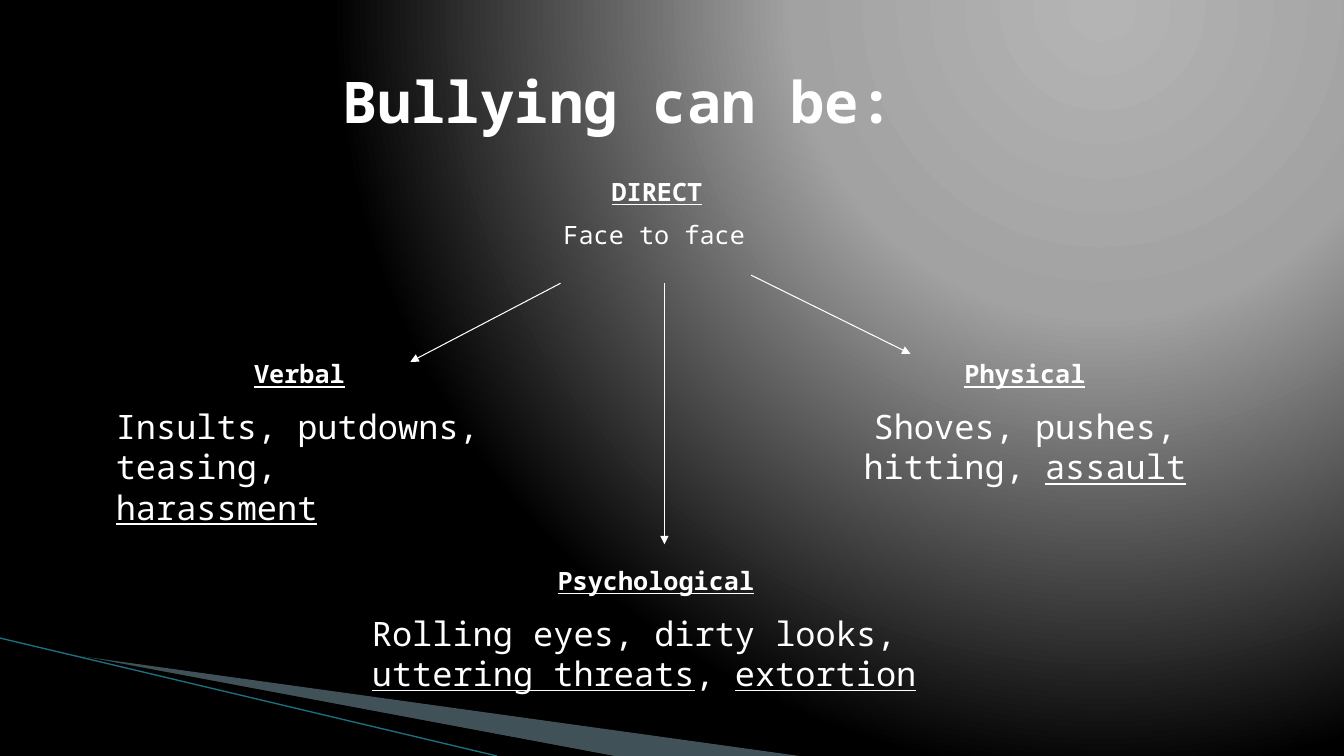
from dataclasses import dataclass

from lxml import etree
from pptx import Presentation
from pptx.dml.color import RGBColor
from pptx.enum.shapes import MSO_CONNECTOR
from pptx.enum.text import MSO_ANCHOR, PP_ALIGN
from pptx.oxml import parse_xml
from pptx.oxml.ns import nsdecls, qn
from pptx.util import Inches, Pt

STRAIGHT = MSO_CONNECTOR.STRAIGHT
MIDDLE = MSO_ANCHOR.MIDDLE
LEFT, CENTER = PP_ALIGN.LEFT, PP_ALIGN.CENTER


@dataclass(frozen=True)
class Theme:
    font: str = "Noto Sans Mono"
    text: str = "FFFFFF"
    wedge: str = "A0CBDC"
    wedge_alpha: int = 40
    shade: str = "000000"
    stripe: str = "1C7080"
    glow: tuple = ((0, "B4B4B4"), (40, "A2A2A2"), (100, "000000"))
    title_size: int = 41
    heading_size: int = 18
    body_size: int = 24


THEME = Theme()


def set_background(slide):
    """Fill the background with a round glow centred near the top right."""
    stops = "".join(
        f'<a:gs pos="{position * 1000}"><a:srgbClr val="{color}"/></a:gs>'
        for position, color in THEME.glow
    )
    background = parse_xml(
        f'<p:bg {nsdecls("p", "a")}><p:bgPr><a:gradFill rotWithShape="1">'
        f'<a:gsLst>{stops}</a:gsLst><a:path path="circle">'
        '<a:fillToRect l="65000" t="0" r="0" b="98000"/></a:path>'
        "</a:gradFill><a:effectLst/></p:bgPr></p:bg>"
    )
    slide.element.find(qn("p:cSld")).insert(0, background)


def add_line(slide, start, end, color, width, arrow=False):
    points = [Inches(value) for value in (*start, *end)]
    line = slide.shapes.add_connector(STRAIGHT, *points)
    line.line.color.rgb = RGBColor.from_string(color)
    line.line.width = Pt(width)
    properties = line.element.spPr
    if arrow:
        outline = properties.find(qn("a:ln"))
        etree.SubElement(outline, qn("a:tailEnd"), type="triangle")
    etree.SubElement(properties, qn("a:effectLst"))


def add_wedge(slide, points, color, alpha=100):
    corners = [(Inches(x), Inches(y)) for x, y in points]
    builder = slide.shapes.build_freeform(*corners[0])
    builder.add_line_segments(corners[1:], close=True)
    wedge = builder.convert_to_shape()
    wedge.shadow.inherit = False
    wedge.fill.solid()
    wedge.fill.fore_color.rgb = RGBColor.from_string(color)
    wedge.line.fill.background()
    if alpha < 100:
        fill_color = wedge.element.spPr.find(qn("a:solidFill"))[0]
        etree.SubElement(fill_color, qn("a:alpha"), val=str(alpha * 1000))


def add_corner_decoration(slide):
    add_wedge(slide, [(0.73, 6.5), (7.93, 7.5), (6.08, 7.5)],
              THEME.wedge, THEME.wedge_alpha)
    add_wedge(slide, [(0.71, 6.49), (6.09, 7.5), (4.96, 7.5)], THEME.shade)
    add_line(slide, (0, 6.33), (4.93, 7.5), THEME.stripe, 0.95)


def add_text_frame(slide, box):
    shape = slide.shapes.add_textbox(*[Inches(value) for value in box])
    shape.text_frame.word_wrap = True
    return shape.text_frame


def add_run(paragraph, text, size, bold=False, underline=False):
    run = paragraph.add_run()
    run.text = text
    font = run.font
    font.name = THEME.font
    font.size = Pt(size)
    font.bold = bold
    font.underline = underline
    font.color.rgb = RGBColor.from_string(THEME.text)


def add_title(slide, box, text):
    frame = add_text_frame(slide, box)
    frame.vertical_anchor = MIDDLE
    add_run(frame.paragraphs[0], text, THEME.title_size, bold=True)


def add_topic(slide, box, heading, body, size, alignment=LEFT):
    """Place a heading over a body of (text, underlined) pieces."""
    frame = add_text_frame(slide, box)
    first = frame.paragraphs[0]
    first.alignment = CENTER
    add_run(first, heading, THEME.heading_size, bold=True, underline=True)
    second = frame.add_paragraph()
    second.alignment = alignment
    second.space_before = Pt(size / 2)
    for text, underlined in body:
        add_run(second, text, size, underline=underlined)


def add_bullying_diagram(slide):
    add_topic(slide, (5.49, 1.7, 2.05, 0.86), "DIRECT",
              [("Face to face", False)], THEME.heading_size)
    add_topic(slide, (1.05, 3.51, 3.84, 1.41), "Verbal",
              [("Insults, putdowns, teasing, ", False), ("harassment", True)],
              THEME.body_size)
    add_topic(slide, (8.16, 3.51, 4.01, 1.41), "Physical",
              [("Shoves, pushes, hitting, ", False), ("assault", True)],
              THEME.body_size, CENTER)
    add_topic(slide, (3.59, 5.56, 5.83, 1.41), "Psychological",
              [("Rolling eyes, dirty looks, ", False),
               ("uttering threats", True), (", ", False), ("extortion", True)],
              THEME.body_size)
    for start, end in (((5.56, 2.81), (4.07, 3.59)),
                       ((7.45, 2.73), (9.03, 3.51)),
                       ((6.59, 2.81), (6.59, 5.4))):
        add_line(slide, start, end, THEME.text, 0.75, arrow=True)


def main():
    presentation = Presentation()
    presentation.slide_width = Inches(13.33)
    presentation.slide_height = Inches(7.5)
    slide = presentation.slides.add_slide(presentation.slide_layouts[6])
    set_background(slide)
    add_corner_decoration(slide)
    add_title(slide, (3.3, 0.25, 6.7, 1.5), "Bullying can be:")
    add_bullying_diagram(slide)
    presentation.save("out.pptx")


if __name__ == "__main__":
    main()
